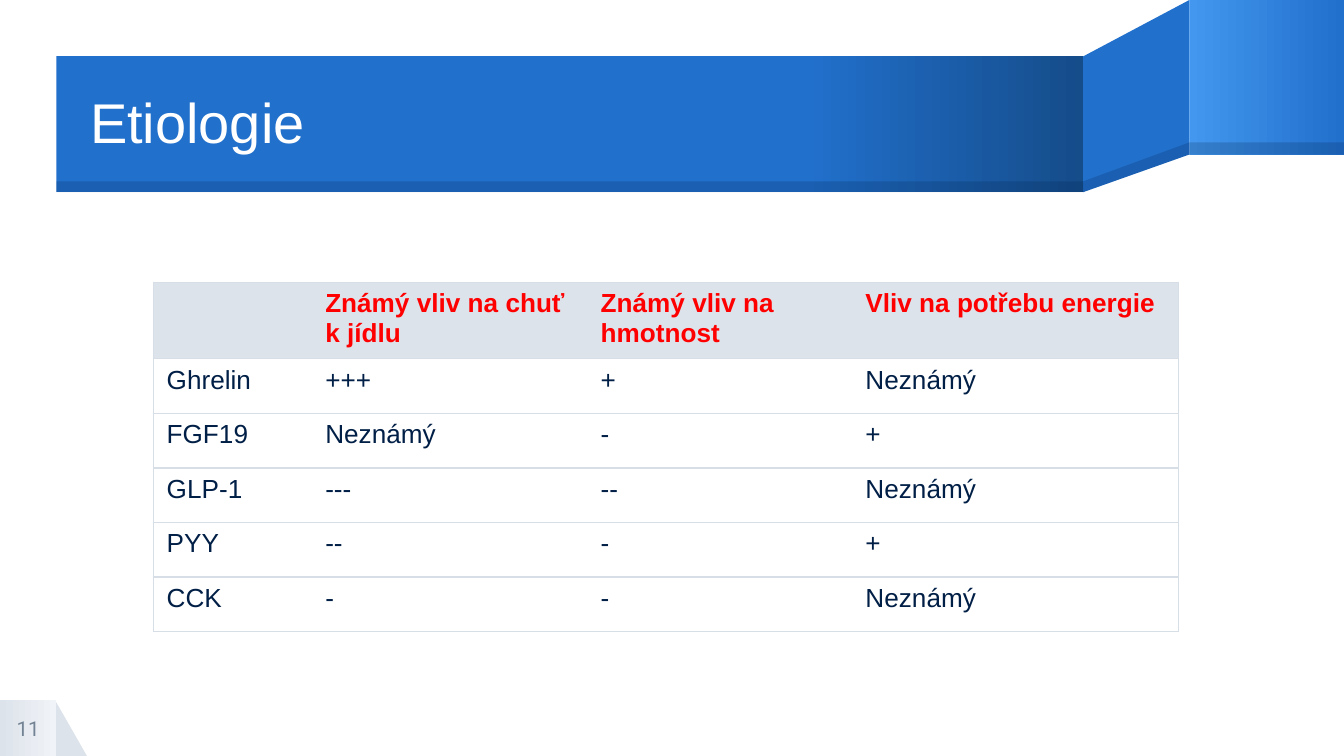
from dataclasses import dataclass
from typing import Optional

from lxml import etree
from pptx import Presentation, util as u
from pptx.dml.color import RGBColor
from pptx.enum import shapes, text
from pptx.oxml import ns

BLUE = RGBColor(0x21, 0x70, 0xCC)
LIGHT = RGBColor(0x43, 0x97, 0xEE)
DARK = RGBColor(0x15, 0x4C, 0x8A)
NAVY = RGBColor(0x00, 0x1F, 0x46)
GREY = RGBColor(0xDD, 0xE3, 0xEB)
PALE = RGBColor(0xF0, 0xF3, 0xF7)
RULE = RGBColor(0xD8, 0xDE, 0xE6)
SLATE = RGBColor(0x74, 0x83, 0x94)
WHITE = RGBColor(0xFF, 0xFF, 0xFF)
RED = RGBColor(0xFF, 0x00, 0x00)

Box = tuple[float, float, float, float]
Stops = tuple[tuple[int, RGBColor], ...]


@dataclass
class Paint:
    stops: Stops
    alpha: Optional[int] = None


@dataclass
class Block:
    box: Box
    paint: Paint
    kind: shapes.MSO_SHAPE = shapes.MSO_SHAPE.RECTANGLE


@dataclass
class Fold:
    points: tuple[tuple[float, float], ...]
    paint: Paint


@dataclass
class Label:
    box: Box
    words: str
    size: int
    font: str
    color: RGBColor
    align: text.PP_ALIGN
    space: float = 1.0


WIDE = 10
TALL = WIDE * 9 / 16
SHADE = Paint(((0, NAVY),), 20)
PARTS = (
    Block((0.41, 5.21, 0.24, 0.42), Paint(((0, GREY),)), shapes.MSO_SHAPE.RIGHT_TRIANGLE),
    Block((0, 5.21, 0.42, 0.42), Paint(((0, GREY), (100, PALE)))),
    Fold(((8.85, 0), (8.06, 0.42), (8.06, 1.43), (8.85, 1.15)), Paint(((0, BLUE),))),
    Block((8.85, 0, 1.15, 1.15), Paint(((0, LIGHT), (100, BLUE)))),
    Block((0.42, 0.42, 7.64, 1.01), Paint(((0, BLUE), (73, BLUE), (100, DARK)))),
    Fold(((8.85, 1.06), (8.06, 1.35), (8.06, 1.43), (8.85, 1.15)), SHADE),
    Block((8.85, 1.06, 1.15, 0.09), SHADE),
    Block((0.42, 1.35, 7.64, 0.08), SHADE),
)
LABELS = (
    Label((0.67, 0.43, 7.39, 1.01), "Etiologie", 30, "Arial", WHITE, text.PP_ALIGN.LEFT, 0.9),
    Label((0, 5.21, 0.42, 0.42), "11", 11, "Roboto", SLATE, text.PP_ALIGN.CENTER),
)
ROWS = (
    ("", "Známý vliv na chuť k jídlu", "Známý vliv na hmotnost", "Vliv na potřebu energie"),
    ("Ghrelin", "+++", "+", "Neznámý"),
    ("FGF19", "Neznámý", "-", "+"),
    ("GLP-1", "---", "--", "Neznámý"),
    ("PYY", "--", "-", "+"),
    ("CCK", "-", "-", "Neznámý"),
)
WIDTHS = (1.18, 2.05, 1.97, 2.43)
TABLE = (1.14, 2.1, sum(WIDTHS), 2.6)
HEAD = 0.57


def scale(box: Box) -> list[u.Length]:
    """Turn a box in inches into lengths."""
    return [u.Inches(side) for side in box]


def tint(shape, paint: Paint) -> None:
    """Fill a shape with a plain, clear or graded colour."""
    shape.shadow.inherit = False
    shape.line.fill.background()
    if len(paint.stops) == 1:
        shape.fill.solid()
        shape.fill.fore_color.rgb = paint.stops[0][1]
        if paint.alpha is not None:
            color = shape._element.spPr.find(".//" + ns.qn("a:srgbClr"))
            etree.SubElement(color, ns.qn("a:alpha"), val=str(paint.alpha * 1000))
        return
    shape.fill.gradient()
    shape.fill.gradient_angle = 0
    grade = shape._element.spPr.find(".//" + ns.qn("a:gsLst"))
    for old in list(grade):
        grade.remove(old)
    for place, color in paint.stops:
        stop = etree.SubElement(grade, ns.qn("a:gs"), pos=str(place * 1000))
        etree.SubElement(stop, ns.qn("a:srgbClr"), val=str(color))


def draw_block(slide, block: Block) -> None:
    """Draw a preset shape."""
    tint(slide.shapes.add_shape(block.kind, *scale(block.box)), block.paint)


def draw_fold(slide, fold: Fold) -> None:
    """Draw a slanted piece of the ribbon."""
    first, *rest = [(u.Inches(x), u.Inches(y)) for x, y in fold.points]
    pen = slide.shapes.build_freeform(*first)
    pen.add_line_segments(rest, close=True)
    tint(pen.convert_to_shape(), fold.paint)


def style(para, size: int, font: str, color: RGBColor, bold: bool = False) -> None:
    """Format the runs of a paragraph."""
    for run in para.runs:
        run.font.size = u.Pt(size)
        run.font.name = font
        run.font.bold = bold
        run.font.color.rgb = color


def draw_label(slide, label: Label) -> None:
    """Draw a text box without insets."""
    frame = slide.shapes.add_textbox(*scale(label.box)).text_frame
    frame.word_wrap = True
    frame.vertical_anchor = text.MSO_ANCHOR.MIDDLE
    frame.margin_left = frame.margin_right = frame.margin_top = frame.margin_bottom = 0
    frame.text = label.words
    para = frame.paragraphs[0]
    para.alignment = label.align
    para.line_spacing = label.space
    style(para, label.size, label.font, label.color)


def edge(cell, side: str, shown: bool) -> None:
    """Show or hide one border of a cell."""
    line = etree.SubElement(cell._tc.get_or_add_tcPr(), ns.qn("a:ln" + side), w=str(u.Pt(0.75)))
    fill = etree.SubElement(line, ns.qn("a:solidFill" if shown else "a:noFill"))
    if shown:
        etree.SubElement(fill, ns.qn("a:srgbClr"), val=str(RULE))


def draw_table(slide) -> None:
    """Draw the table of hormones."""
    grid = slide.shapes.add_table(len(ROWS), len(WIDTHS), *scale(TABLE)).table
    for col, width in zip(grid.columns, WIDTHS):
        col.width = u.Inches(width)
    for r, words in enumerate(ROWS):
        top = r == 0
        grid.rows[r].height = u.Inches(HEAD if top else (TABLE[3] - HEAD) / (len(ROWS) - 1))
        for c, word in enumerate(words):
            cell = grid.cell(r, c)
            cell.margin_left = cell.margin_right = u.Inches(0.1)
            cell.margin_top = cell.margin_bottom = u.Inches(0.05)
            cell.text_frame.text = word
            style(cell.text_frame.paragraphs[0], 14, "Arial", RED if top else NAVY, top)
            edge(cell, "L", c == 0)
            edge(cell, "R", c == len(WIDTHS) - 1)
            edge(cell, "T", True)
            edge(cell, "B", True)
            cell.fill.solid()
            cell.fill.fore_color.rgb = GREY if top else WHITE


def main() -> None:
    """Build and save the slide."""
    deck = Presentation()
    deck.slide_width, deck.slide_height = u.Inches(WIDE), u.Inches(TALL)
    slide = deck.slides.add_slide(deck.slide_layouts[6])
    for part in PARTS:
        if isinstance(part, Block):
            draw_block(slide, part)
        else:
            draw_fold(slide, part)
    for label in LABELS:
        draw_label(slide, label)
    draw_table(slide)
    deck.save("out.pptx")


if __name__ == "__main__":
    main()
